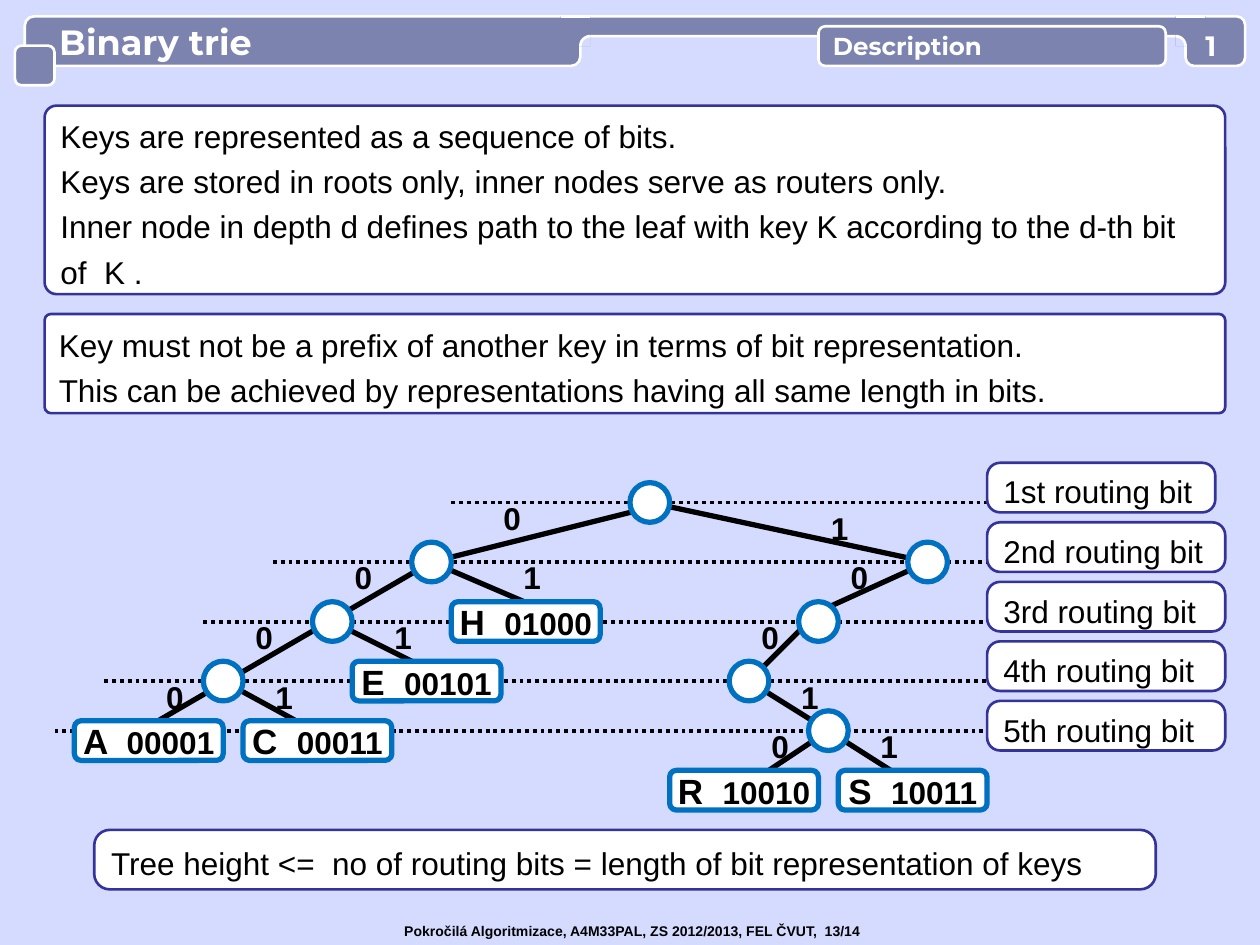
"""Build the binary trie slide."""
from dataclasses import dataclass
from math import cos, pi, sin

from lxml.etree import SubElement
from pptx import Presentation
from pptx.dml.color import RGBColor
from pptx.enum.dml import MSO_LINE
from pptx.enum.shapes import MSO_CONNECTOR, MSO_SHAPE
from pptx.enum.text import MSO_ANCHOR, MSO_AUTO_SIZE, PP_ALIGN
from pptx.oxml.ns import qn
from pptx.util import Cm, Pt

COLORS = {"back": "D5DAFF", "bar": "7D83AF", "white": "FFFFFF", "black": "000000",
          "node": "0070C0", "frame": "333399"}
ROWS = [10.13, 11.33, 12.53, 13.73, 14.73]
TOP, BEND = 0.33, 0.2


@dataclass
class Level:
    left: float
    right: float
    name: str
    width: float = 4.8


@dataclass
class Edge:
    x1: float
    y1: float
    x2: float
    y2: float


@dataclass
class Node:
    x: float
    depth: int


@dataclass
class Bit:
    text: str
    x: float
    depth: int
    drop: float = -0.2


@dataclass
class Key:
    letter: str
    bits: str
    x: float
    y: float


@dataclass
class Panel:
    x: float
    y: float
    w: float
    h: float
    lines: list[str]
    adj: float = 0.262


LEVELS = [Level(9.1, 23.5, "1st", 4.6), Level(5.5, 22.9, "2nd"), Level(4.1, 23.7, "3rd"),
          Level(2.1, 23.7, "4th"), Level(1.1, 23.5, "5th")]
EDGES = [Edge(2.5, 14.93, 8.7, 11.33), Edge(6.7, 14.93, 4.5, 13.73),
         Edge(9.1, 13.73, 6.7, 12.53), Edge(11.5, 12.53, 8.7, 11.33),
         Edge(13.5, 10.13, 8.7, 11.33), Edge(18.7, 11.33, 13.1, 10.13),
         Edge(18.7, 11.33, 16.5, 12.33), Edge(16.5, 12.33, 15.1, 13.73),
         Edge(15.1, 13.73, 16.7, 14.73), Edge(16.7, 14.73, 18.9, 16.13),
         Edge(14.9, 15.93, 16.7, 14.73)]
BITS = [Bit("0", 9.9, 0), Bit("1", 16.5, 0, 0), Bit("0", 6.9, 1), Bit("1", 10.3, 1),
        Bit("0", 16.9, 1), Bit("0", 4.9, 2), Bit("1", 7.7, 2), Bit("0", 15.1, 2),
        Bit("0", 3.1, 3), Bit("1", 5.3, 3), Bit("1", 15.9, 3),
        Bit("0", 15.3, 4), Bit("1", 17.5, 4)]
KEYS = [Key("A", "00001", 1.5, 14.53), Key("C", "00011", 4.9, 14.53),
        Key("R", "10010", 13.5, 15.53), Key("S", "10011", 16.9, 15.53),
        Key("E", "00101", 7.1, 13.33), Key("H", "01000", 9.1, 12.13)]
NODES = [Node(13.1, 0), Node(8.7, 1), Node(18.7, 1), Node(6.7, 2), Node(16.5, 2),
         Node(4.5, 3), Node(15.1, 3), Node(16.7, 4)]
PANELS = [Panel(19.9, 9.33 + 1.2 * i, v.width, 1, [f"{v.name} routing bit"])
          for i, v in enumerate(LEVELS)] + [
    Panel(1.9, 16.73, 21.4, 1.2,
          ["Tree height <=  no of routing bits = length of bit representation of keys"]),
    Panel(0.9, 2.13, 23.8, 3.8,
          ["Keys are represented as a sequence of bits.",
           "Keys are stored in roots only, inner nodes serve as routers only.",
           "Inner node in depth d defines path to the leaf with key K according to the "
           "d-th bit of  K ."], 0.063),
    Panel(0.9, 6.33, 23.8, 2,
          ["Key must not be a prefix of another key in terms of bit representation.",
           "This can be achieved by representations having all same length in bits."], 0.063)]


def rgb(name: str) -> RGBColor:
    return RGBColor.from_string(COLORS[name])


def paint(sp, fill: str | None, line: str | None, width: float = 1.5) -> None:
    sp.shadow.inherit = False
    if fill:
        sp.fill.solid()
        sp.fill.fore_color.rgb = rgb(fill)
    else:
        sp.fill.background()
    if line:
        sp.line.color.rgb = rgb(line)
        sp.line.width = Pt(width)
    else:
        sp.line.fill.background()


def shape(s, kind, x, y, w, h, fill, line, width=1.5, adj=None):
    sp = s.shapes.add_shape(kind, Cm(x), Cm(y), Cm(w), Cm(h))
    paint(sp, fill, line, width)
    if adj is not None:
        sp.adjustments[0] = adj
    return sp


def line(s, x1, y1, x2, y2, color="black", width=3.0, dotted=False) -> None:
    c = s.shapes.add_connector(MSO_CONNECTOR.STRAIGHT, Cm(x1), Cm(y1), Cm(x2), Cm(y2))
    c.line.color.rgb = rgb(color)
    c.line.width = Pt(width)
    if dotted:
        c.line.dash_style = MSO_LINE.ROUND_DOT
    SubElement(c._element.spPr, qn("a:effectLst"))


def style(r, size: float, color="black", font="Arial", bold=True) -> None:
    r.font.size, r.font.name, r.font.bold = Pt(size), font, bold
    r.font.color.rgb = rgb(color)


def write(sp, lines: list[str], size, color="black", font="Arial", bold=True,
          align=PP_ALIGN.LEFT, spacing=None, wrap=True):
    tf = sp.text_frame
    tf.text = "\n".join(lines)
    tf.word_wrap, tf.vertical_anchor = wrap, MSO_ANCHOR.MIDDLE
    for p in tf.paragraphs:
        p.alignment = align
        if spacing:
            p.line_spacing = spacing
        for r in p.runs:
            style(r, size, color, font, bold)
    return tf


def no_margins(tf) -> None:
    tf.margin_left = tf.margin_right = tf.margin_top = tf.margin_bottom = 0


def label(s, text, x, y, w, h, size, **kw):
    tf = write(s.shapes.add_textbox(Cm(x), Cm(y), Cm(w), Cm(h)), [text], size, **kw)
    tf.auto_size = MSO_AUTO_SIZE.SHAPE_TO_FIT_TEXT
    return tf


def draw_key(s, k: Key) -> None:
    sp = shape(s, MSO_SHAPE.ROUNDED_RECTANGLE, k.x, k.y, 3, 0.8, "white", "node", 3)
    tf = write(sp, [f"{k.letter}  "], 20, align=PP_ALIGN.CENTER)
    no_margins(tf)
    r = tf.paragraphs[0].add_run()
    r.text = k.bits
    style(r, 18)


def joint(s, left: float, cx: float, side: int) -> None:
    """Blend the thin header bar into a tall tab with a concave corner."""
    shape(s, MSO_SHAPE.RECTANGLE, left, TOP, 0.6, 0.6, "bar", None)
    line(s, left, TOP, left + 0.6, TOP, "white", 1.5)
    cy = TOP + 0.6
    arc = [(Cm(cx + side * BEND * cos(i * pi / 24)), Cm(cy - BEND * sin(i * pi / 24)))
           for i in range(13)]
    for points, closed, fill, edge in (([*arc, (Cm(cx), Cm(cy))], True, "back", None),
                                       (arc, False, None, "white")):
        fb = s.shapes.build_freeform(*points[0])
        fb.add_line_segments(points[1:], close=closed)
        paint(fb.convert_to_shape(), fill, edge)


def draw_header(s) -> None:
    def tab(*box, adj=0.17):
        return shape(s, MSO_SHAPE.ROUNDED_RECTANGLE, *box, "bar", "white", adj=adj)

    heading = dict(color="white", font="Montserrat")
    tf = write(tab(0.5, TOP, 11.2, 1, adj=0.188), ["Binary trie"], 20, **heading)
    tf.margin_left = Cm(0.64)
    tab(11.7, TOP, 12.4, 0.4, adj=0.5)
    joint(s, 11.3, 11.9, -1)
    tab(0.3, 0.92, 0.8, 0.8)
    tab(23.9, TOP, 1.2, 1)
    joint(s, 23.7, 23.7, 1)
    write(tab(16.5, 0.53, 7, 0.8), ["Description"], 14, **heading)
    no_margins(label(s, "1", 23.9, 0.56, 1.02, 0.69, 16, align=PP_ALIGN.CENTER, **heading))


def main() -> None:
    prs = Presentation()
    prs.slide_width, prs.slide_height = Cm(25.4), Cm(19.05)
    s = prs.slides.add_slide(prs.slide_layouts[6])
    s.background.fill.solid()
    s.background.fill.fore_color.rgb = rgb("back")
    for v, y in zip(LEVELS, ROWS):
        line(s, v.left, y, v.right, y, width=2.25, dotted=True)
    for e in EDGES:
        line(s, e.x1, e.y1, e.x2, e.y2)
    for b in BITS:
        label(s, b.text, b.x, ROWS[b.depth] + b.drop, 0.86, 1.02, 18, wrap=False)
    for k in KEYS:
        draw_key(s, k)
    for n in NODES:
        shape(s, MSO_SHAPE.OVAL, n.x - 0.4, ROWS[n.depth] - 0.4, 0.8, 0.8, "white", "node", 3)
    for q in PANELS:
        sp = shape(s, MSO_SHAPE.ROUNDED_RECTANGLE, q.x, q.y, q.w, q.h, "white", "frame",
                   adj=q.adj)
        write(sp, q.lines, 18, bold=False, spacing=1.2)
    draw_header(s)
    label(s, "Pokročilá Algoritmizace, A4M33PAL, ZS 2012/2013, FEL ČVUT,  13/14",
          7.9, 18.47, 9.9, 0.61, 8, wrap=False)
    prs.save("out.pptx")


if __name__ == "__main__":
    main()
